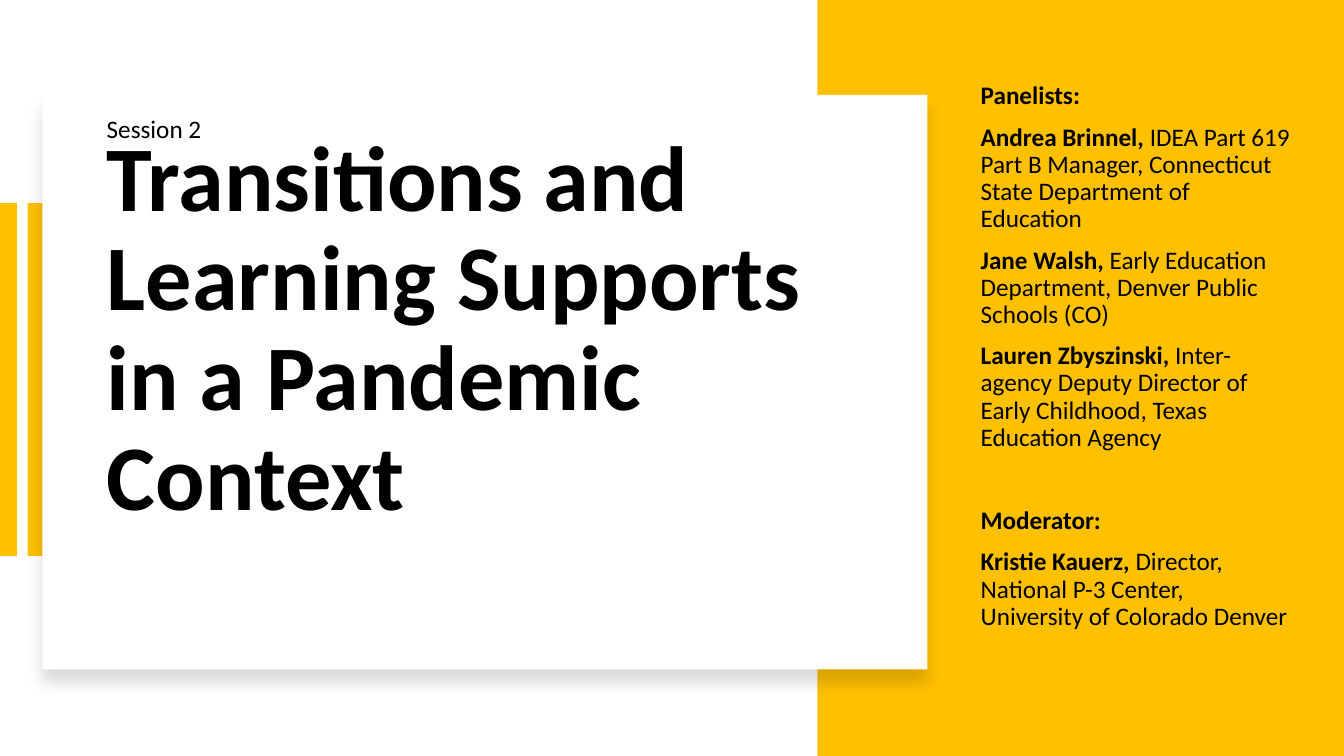
import pptx
import pptx.util
import pptx.dml.color
import pptx.enum.shapes
import pptx.enum.text
import pptx.oxml
import pptx.oxml.ns

Cm, Pt = pptx.util.Cm, pptx.util.Pt
RGBColor = pptx.dml.color.RGBColor
Anchor = pptx.enum.text.MSO_ANCHOR
GOLD = RGBColor(0xFF, 0xC0, 0x00)
WHITE = RGBColor(0xFF, 0xFF, 0xFF)
BLACK = RGBColor(0, 0, 0)

SESSION = "Session 2"
TITLE = "Transitions and Learning Supports in a Pandemic Context"
PEOPLE = [
    ("Panelists:", "", 10),
    ("Andrea Brinnel, ", "IDEA Part 619 Part B Manager, Connecticut State Department of Education", 10),
    ("Jane Walsh, ", "Early Education Department, Denver Public Schools (CO)", 10),
    ("Lauren Zbyszinski, ", "Inter-agency Deputy Director of Early Childhood, Texas Education Agency", 10),
    ("Moderator:", "", 40),
    ("Kristie Kauerz, ", "Director, National P-3 Center, University of Colorado Denver", 10),
]

WIDE, HIGH = 33.87, 19.05
PANEL = 20.6
BAR, STEP, TALL = 0.43, 0.7, 8.89
EDGE = 2.44
SHADOW = (
    '<a:effectLst xmlns:a="http://schemas.openxmlformats.org/drawingml/2006/main">'
    '<a:outerShdw blurRad="%d" dist="%d" dir="5400000" algn="t" rotWithShape="0">'
    '<a:srgbClr val="000000"><a:alpha val="15000"/></a:srgbClr>'
    '</a:outerShdw></a:effectLst>' % (Pt(11), Pt(10))
)


def block(slide, left, top, width, height, color):
    shape = slide.shapes.add_shape(
        pptx.enum.shapes.MSO_SHAPE.RECTANGLE, Cm(left), Cm(top), Cm(width), Cm(height))
    shape.shadow.inherit = False
    shape.fill.solid()
    shape.fill.fore_color.rgb = color
    shape.line.fill.background()
    return shape


def place(slide, shape, left, top, width, height, anchor):
    shape.left, shape.top = Cm(left), Cm(top)
    shape.width, shape.height = Cm(width), Cm(height)
    frame = shape.text_frame
    frame.word_wrap = True
    frame.auto_size = pptx.enum.text.MSO_AUTO_SIZE.NONE
    frame.vertical_anchor = anchor
    slide.shapes.element.append(shape.element)
    return frame


def style(para, size, bold=None):
    para.alignment = pptx.enum.text.PP_ALIGN.LEFT
    font = para.font
    font.name, font.size, font.bold = "Calibri", Pt(size), bold
    font.color.rgb = BLACK


def main():
    deck = pptx.Presentation()
    deck.slide_width, deck.slide_height = Cm(WIDE), Cm(HIGH)
    slide = deck.slides.add_slide(deck.slide_layouts[1])
    title, body = slide.placeholders

    block(slide, PANEL, 0, WIDE - PANEL, HIGH, GOLD)
    for num in range(2):
        block(slide, num * STEP, 5.12, BAR, TALL, GOLD)
    card = block(slide, 1.07, 2.39, 22.3, 14.48, WHITE)
    props = card.element.spPr
    props.remove(props.find(pptx.oxml.ns.qn("a:effectLst")))
    props.append(pptx.oxml.parse_xml(SHADOW))

    frame = place(slide, title, EDGE, 3.18, 19.74, 11.15, Anchor.TOP)
    frame.text = TITLE
    para = frame.paragraphs[0]
    style(para, 66, True)
    para.line_spacing = 0.9

    frame = place(slide, body, 24.46, 1.55, 8.33, 15.7, Anchor.MIDDLE)
    frame.margin_bottom = Cm(0.94)
    for num, (name, role, gap) in enumerate(PEOPLE):
        para = frame.add_paragraph() if num else frame.paragraphs[0]
        style(para, 18)
        para.line_spacing, para.space_before = 0.9, Pt(gap)
        props = para._p.get_or_add_pPr()
        props.set("marL", "0")
        props.set("indent", "0")
        props.insert_element_before(
            pptx.oxml.parse_xml('<a:buNone %s/>' % pptx.oxml.ns.nsdecls("a")),
            "a:tabLst", "a:defRPr", "a:extLst")
        for text, bold in ((name, True), (role, False)):
            if text:
                run = para.add_run()
                run.text, run.font.bold = text, bold

    label = slide.shapes.add_textbox(Cm(EDGE), Cm(2.72), Cm(2.92), Cm(1.02))
    label.text_frame.text = SESSION
    style(label.text_frame.paragraphs[0], 18)

    deck.save("out.pptx")


if __name__ == "__main__":
    main()
